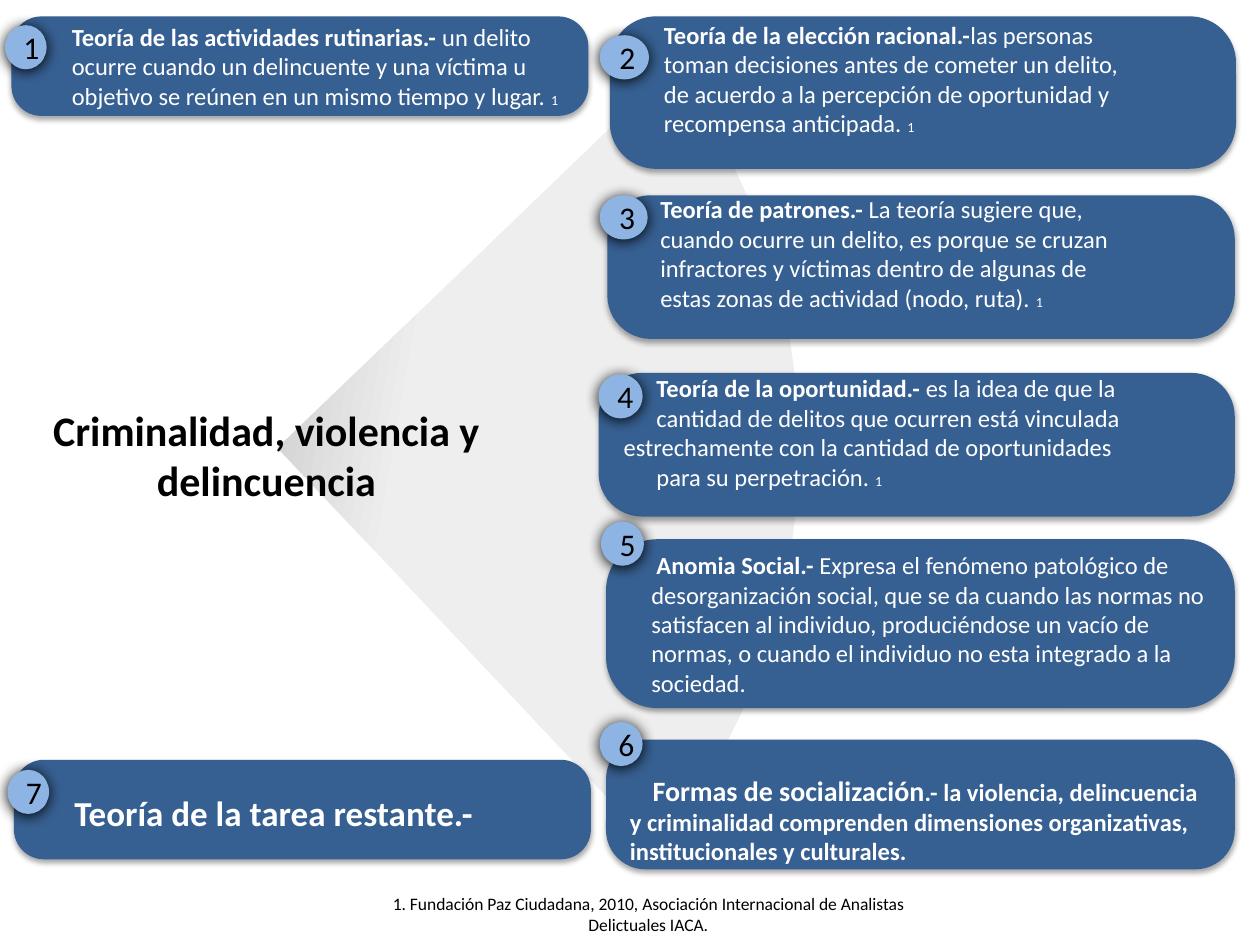
from dataclasses import dataclass
from typing import NamedTuple

from lxml import etree
from pptx import Presentation
from pptx.dml.color import RGBColor
from pptx.enum.shapes import MSO_SHAPE
from pptx.enum.text import MSO_ANCHOR, PP_ALIGN
from pptx.oxml.ns import qn
from pptx.util import Inches, Pt

PIE, ROUND, OVAL = MSO_SHAPE.PIE, MSO_SHAPE.ROUNDED_RECTANGLE, MSO_SHAPE.OVAL
MIDDLE, TOP = MSO_ANCHOR.MIDDLE, MSO_ANCHOR.TOP
LEFT, CENTER = PP_ALIGN.LEFT, PP_ALIGN.CENTER

COLORS = {"card": "376092", "badge": "8EB4E3", "light": "FFFFFF", "dark": "000000",
          "wedge": "EEEEEE", "apex": "A6A6A6"}
FONT = "Calibri"
COLS, ROWS = 100, 75
CORNER = 0.303
CORNER_INSET = CORNER * 0.293


class Box(NamedTuple):
    col: float
    row: float
    cols: float
    rows: float


class Run(NamedTuple):
    text: str
    size: float = 14
    bold: bool = False


class Shadow(NamedTuple):
    alpha: int
    blur: float
    dist: float


@dataclass
class Card:
    number: int
    box: Box
    badge: Box
    text_col: float
    lines: list[list[Run]]
    indent: float = 0
    indent_all: bool = False
    lift: float = 0


CARD_SHADOW = Shadow(35, 3.1, 1.8)
BADGE_SHADOW = Shadow(100, 8.5, 1)
REF = Run("1", 8)

CARDS = [
    Card(1, Box(0.9, 1.3, 45.8, 7.9), Box(0.4, 2, 3.3, 3.5), 5.7, [
        [Run("Teoría de las actividades rutinarias.- ", bold=True), Run("un delito")],
        [Run("ocurre cuando un delincuente y una víctima u")],
        [Run("objetivo se reúnen en un mismo tiempo y lugar. "), REF]]),
    Card(2, Box(48.4, 1.3, 49.7, 12.1), Box(47.6, 2.8, 3.9, 3.5), 52.7, [
        [Run("Teoría de la elección racional.-", bold=True), Run("las personas")],
        [Run("toman decisiones antes de cometer un delito,")],
        [Run("de acuerdo a la percepción de oportunidad y")],
        [Run("recompensa anticipada. "), REF]], lift=1.1),
    Card(3, Box(48.2, 15.5, 49.8, 11.4), Box(47.6, 15.5, 3.8, 3.5), 52.4, [
        [Run("Teoría de patrones.- ", bold=True), Run("La teoría sugiere que,")],
        [Run("cuando ocurre un delito, es porque se cruzan")],
        [Run("infractores y víctimas dentro de algunas de")],
        [Run("estas zonas de actividad (nodo, ruta). "), REF]], lift=1.1),
    Card(4, Box(47.5, 29.6, 50.5, 11.4), Box(47.5, 29.7, 3.5, 3.5), 49.5, [
        [Run("Teoría de la oportunidad.- ", bold=True), Run("es la idea de que la")],
        [Run("cantidad de delitos que ocurren está vinculada estrechamente "
             "con la cantidad de oportunidades")],
        [Run("para su perpetración. "), REF]], indent=2.6, indent_all=True, lift=1),
    Card(5, Box(48.1, 42.8, 49.9, 13.4), Box(47.7, 41.4, 3.4, 3.5), 51.7, [
        [Run("Anomia Social.- ", bold=True), Run("Expresa el fenómeno patológico de")],
        [Run("desorganización social, que se da cuando las normas no")],
        [Run("satisfacen al individuo, produciéndose un vacío de")],
        [Run("normas, o cuando el individuo no esta integrado a la")],
        [Run("sociedad.")]], indent=0.4),
    Card(6, Box(48.1, 58.7, 49.9, 10.3), Box(47.6, 57.3, 3.4, 3.5), 50, [
        [Run("Formas de socialización", 16, True),
         Run(".- la violencia, delincuencia y criminalidad comprenden dimensiones "
             "organizativas, institucionales y culturales.", bold=True)]],
         indent=1.8, lift=-1.2),
    Card(7, Box(1.1, 60.3, 45.8, 7.9), Box(0.6, 61.1, 3.3, 3.5), 5.9, [
        [Run("Teoría de la tarea restante.-", 20, True)]], lift=-0.2),
]


def rgb(name: str) -> RGBColor:
    return RGBColor.from_string(COLORS[name])


def cells(n: float) -> int:
    return Inches(n / 10)


def place(box: Box) -> list[int]:
    return [cells(n) for n in box]


def add_shape(slide, kind, box: Box):
    sp = slide.shapes.add_shape(kind, *place(box))
    sp.line.fill.background()
    sp.shadow.inherit = False
    return sp


def fill_shape(sp, color: str, shadow: Shadow) -> None:
    sp.fill.solid()
    sp.fill.fore_color.rgb = rgb(color)
    effects = sp._element.spPr.find(qn("a:effectLst"))
    outer = etree.SubElement(effects, qn("a:outerShdw"), blurRad=str(Pt(shadow.blur)),
                             dist=str(Pt(shadow.dist)), dir="5400000", rotWithShape="0")
    clr = etree.SubElement(outer, qn("a:srgbClr"), val=COLORS["dark"])
    etree.SubElement(clr, qn("a:alpha"), val=str(shadow.alpha * 1000))


def write(tf, lines: list[list[Run]], color: str, align, anchor) -> None:
    tf.word_wrap = True
    tf.vertical_anchor = anchor
    for i, line in enumerate(lines):
        p = tf.paragraphs[0] if i == 0 else tf.add_paragraph()
        p.alignment = align
        for run in line:
            r = p.add_run()
            r.text = run.text
            r.font.name = FONT
            r.font.size = Pt(run.size)
            r.font.bold = run.bold
            r.font.color.rgb = rgb(color)


def draw_wedge(slide) -> None:
    sp = add_shape(slide, PIE, Box(-19.3, -10.5, 82.7, 92.1))
    sp.adjustments[0], sp.adjustments[1] = 189.65, 28.03
    sp.fill.gradient()
    sp.fill.gradient_angle = 170
    for stop, pos, color in zip(sp.fill.gradient_stops, (0.4, 0.68), ("wedge", "apex")):
        stop.position = pos
        stop.color.rgb = rgb(color)


def draw_card(slide, card: Card) -> None:
    sp = add_shape(slide, ROUND, card.box)
    sp.adjustments[0] = CORNER
    fill_shape(sp, "card", CARD_SHADOW)
    tf = sp.text_frame
    tf.margin_left = cells(card.text_col - card.box.col - CORNER_INSET * card.box.rows)
    tf.margin_right = cells(1)
    tf.margin_top = cells(max(0, -2 * card.lift))
    tf.margin_bottom = cells(max(0, 2 * card.lift))
    write(tf, card.lines, "light", LEFT, MIDDLE)
    for p in tf.paragraphs if card.indent_all else tf.paragraphs[:1]:
        p._p.get_or_add_pPr().set("indent", str(cells(card.indent)))


def draw_badge(slide, card: Card) -> None:
    sp = add_shape(slide, OVAL, card.badge)
    fill_shape(sp, "badge", BADGE_SHADOW)
    write(sp.text_frame, [[Run(str(card.number), 18)]], "dark", CENTER, MIDDLE)


def draw_text(slide, box: Box, run: Run) -> None:
    sp = slide.shapes.add_textbox(*place(box))
    write(sp.text_frame, [[run]], "dark", CENTER, TOP)


def main() -> None:
    prs = Presentation()
    prs.slide_width, prs.slide_height = cells(COLS), cells(ROWS)
    slide = prs.slides.add_slide(prs.slide_layouts[6])
    draw_wedge(slide)
    for card in CARDS:
        draw_card(slide, card)
        draw_badge(slide, card)
    draw_text(slide, Box(0.8, 31.6, 40.7, 9.1),
              Run("Criminalidad, violencia y delincuencia", 24, True))
    draw_text(slide, Box(28.4, 70.4, 46.1, 4.4),
              Run("1. Fundación Paz Ciudadana, 2010, Asociación Internacional "
                  "de Analistas Delictuales IACA.", 10))
    prs.save("out.pptx")


if __name__ == "__main__":
    main()
